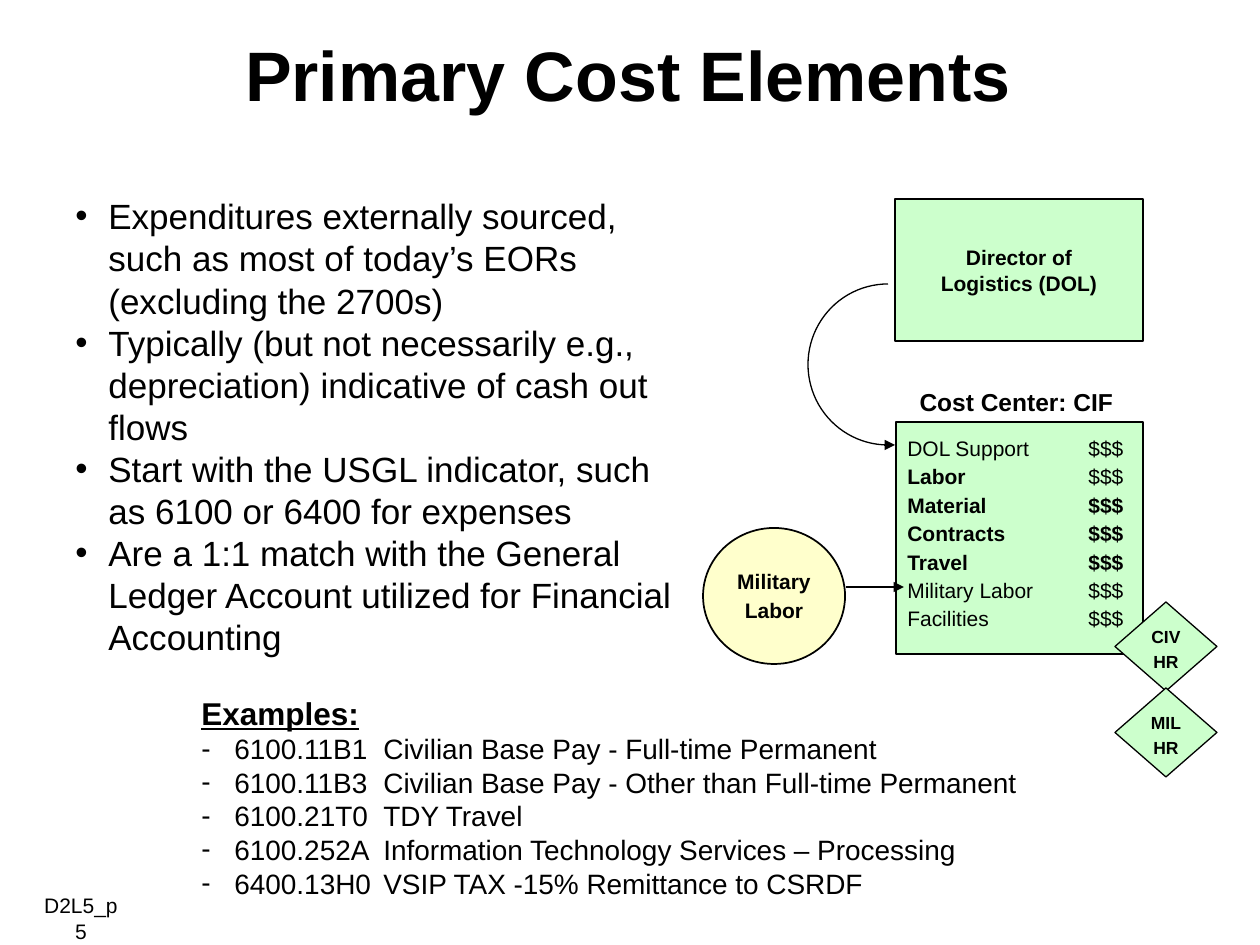
import pptx
import pptx.util
import pptx.dml.color
import pptx.enum.shapes
import pptx.enum.text
import pptx.oxml.ns
import lxml.etree

PX = 914400 / 126
SHAPES = pptx.enum.shapes.MSO_SHAPE
ALIGN = pptx.enum.text.PP_ALIGN
MIDDLE = pptx.enum.text.MSO_ANCHOR.MIDDLE
GREEN, YELLOW, BLACK = "CCFFCC", "FFFFCC", "000000"


def px(value):
    """Turn px into EMU."""
    return pptx.util.Emu(round(value * PX))


def colour(value):
    """Turn a hex string into a colour."""
    return pptx.dml.color.RGBColor.from_string(value)


def add_element(parent, tag, **attributes):
    """Append a drawing element with attributes."""
    name = pptx.oxml.ns.qn(tag)
    return lxml.etree.SubElement(parent, name, attributes)


def set_bullet(para, mark):
    """Give a paragraph a hanging indent and, if there is a mark, a bullet."""
    properties = para._p.get_or_add_pPr()
    properties.set("marL", str(px(33)))
    properties.set("indent", str(-px(33)))
    if mark:
        add_element(properties, "a:buFont", typeface="Arial")
        add_element(properties, "a:buChar", char=mark)


def set_tab(para, position):
    """Give a paragraph one left tab stop."""
    tabs = add_element(para._p.get_or_add_pPr(), "a:tabLst")
    add_element(tabs, "a:tab", pos=str(px(position)), algn="l")


def set_font(font, size, bold=False):
    """Set Arial in black at a size."""
    font.name = "Arial"
    font.size = pptx.util.Pt(size)
    font.bold = bold
    font.color.rgb = colour(BLACK)


def fill_text(box, lines, size, bold=False, align=ALIGN.LEFT, mark=None,
              tab=None, inset=0, after=0, wrap=True):
    """Write lines into a shape and return its paragraphs."""
    frame = box.text_frame
    frame.word_wrap = wrap
    frame.margin_left = frame.margin_right = pptx.util.Inches(0.1)
    frame.margin_top = frame.margin_bottom = px(inset)
    for index, line in enumerate(lines):
        para = frame.add_paragraph() if index else frame.paragraphs[0]
        para.text = line
        para.alignment = align
        para.space_after = pptx.util.Pt(after)
        if mark:
            set_bullet(para, mark)
        if tab:
            set_tab(para, tab)
        set_font(para.font, size, bold)
    return frame.paragraphs


def add_text(page, left, top, width, height, lines, size, **style):
    """Add a text box and return its paragraphs."""
    box = page.shapes.add_textbox(px(left), px(top), px(width), px(height))
    return fill_text(box, lines, size, **style)


def add_outline(page, kind, left, top, width, height, fill=None, weight=0.75):
    """Add a black-lined preset shape."""
    box = page.shapes.add_shape(kind, px(left), px(top), px(width), px(height))
    box.shadow.inherit = False
    box.line.color.rgb = colour(BLACK)
    box.line.width = pptx.util.Pt(weight)
    if fill:
        box.fill.solid()
        box.fill.fore_color.rgb = colour(fill)
    else:
        box.fill.background()
    return box


def add_arrow(page, left, top, length, weight):
    """Add a horizontal arrow pointing right."""
    arrow = page.shapes.add_connector(
        pptx.enum.shapes.MSO_CONNECTOR.STRAIGHT,
        px(left), px(top), px(left + length), px(top))
    arrow.line.color.rgb = colour(BLACK)
    arrow.line.width = pptx.util.Pt(weight)
    add_element(arrow.line._get_or_add_ln(), "a:tailEnd", type="triangle")
    add_element(arrow._element.spPr, "a:effectLst")


def add_cost_center(page, left, top):
    """Add the cost center heading, panel and rows of amounts."""
    add_outline(page, SHAPES.RECTANGLE, left, top, 247, 232, GREEN)
    add_text(page, left + 6, top - 41, 229, 41, ["Cost Center: CIF"], 14,
             bold=True, align=ALIGN.CENTER, inset=6, after=2)
    rows = [("DOL Support", False, False), ("Labor", True, False),
            ("Material", True, True), ("Contracts", True, True),
            ("Travel", True, True), ("Military Labor", False, False),
            ("Facilities", False, False)]
    for index, (name, bold_name, bold_amount) in enumerate(rows):
        para = add_text(page, left - 1, top + 14 + round(index * 28.4), 276, 25,
                        [name], 12, bold=bold_name, tab=181)[0]
        span = para.add_run()
        span.text = "\t$$$"
        if bold_amount != bold_name:
            span.font.bold = bold_amount


def add_diamond(page, left, top, lines):
    """Add a personnel diamond with its label."""
    add_outline(page, SHAPES.DIAMOND, left, top, 102, 89, GREEN)
    add_text(page, left + 18, top + 18, 66, 58, lines, 10, bold=True,
             align=ALIGN.CENTER, inset=6, after=2, wrap=False)


def add_diagram(page, left, top):
    """Add the cost flow diagram."""
    director = add_outline(page, SHAPES.RECTANGLE, left + 192, top, 248, 142, GREEN)
    fill_text(director, ["Director of", "Logistics (DOL)"], 12, bold=True,
              align=ALIGN.CENTER, wrap=False)
    add_cost_center(page, left + 193, top + 223)
    labor = add_outline(page, SHAPES.OVAL, left, top + 329, 142, 136, YELLOW, 1)
    fill_text(labor, ["Military", "Labor"], 12, bold=True,
              align=ALIGN.CENTER, inset=6, after=2, wrap=False)
    for box in (director, labor):
        box.text_frame.vertical_anchor = MIDDLE
    curve = add_outline(page, SHAPES.LEFT_BRACKET, left + 105, top + 85, 80, 161)
    curve.adjustments[0] = 161 / 80 / 2
    add_arrow(page, left + 181, top + 246, 11, 0.75)
    add_arrow(page, left + 143, top + 388, 58, 1)
    add_diamond(page, left + 412, top + 403, ["CIV", "HR"])
    add_diamond(page, left + 412, top + 489, ["MIL", "HR"])


def add_examples(page, left, top):
    """Add the heading and list of example accounts."""
    heading, *accounts = add_text(page, left, top, 924, 239, [
        "Examples:",
        "6100.11B1\tCivilian Base Pay - Full-time Permanent",
        "6100.11B3\tCivilian Base Pay - Other than Full-time Permanent",
        "6100.21T0\tTDY Travel",
        "6100.252A\tInformation Technology Services – Processing",
        "6400.13H0\tVSIP TAX -15% Remittance to CSRDF"], 16)
    set_font(heading.font, 18, True)
    heading.font.underline = True
    for para in accounts:
        properties = para._p.get_or_add_pPr()
        set_bullet(para, "-")
        set_tab(para, 182)


def main():
    """Build the deck."""
    deck = pptx.Presentation()
    deck.slide_width = pptx.util.Inches(10)
    deck.slide_height = pptx.util.Inches(7.5)
    page = deck.slides.add_slide(deck.slide_layouts[6])
    add_text(page, 166, 32, 924, 115, ["Primary Cost Elements"], 40,
             bold=True, align=ALIGN.CENTER)
    add_text(page, 63, 189, 630, 517, [
        "Expenditures externally sourced, such as most of today’s EORs (excluding the 2700s)",
        "Typically (but not necessarily e.g., depreciation) indicative of cash out flows",
        "Start with the USGL indicator, such as 6100 or 6400 for expenses",
        "Are a 1:1 match with the General Ledger Account utilized for Financial Accounting",
    ], 20, mark="•", inset=6)
    add_diagram(page, 703, 199)
    add_examples(page, 189, 694)
    add_text(page, 31, 893, 100, 50, ["D2L5_p5"], 12, align=ALIGN.CENTER)
    deck.save("out.pptx")


if __name__ == "__main__":
    main()
